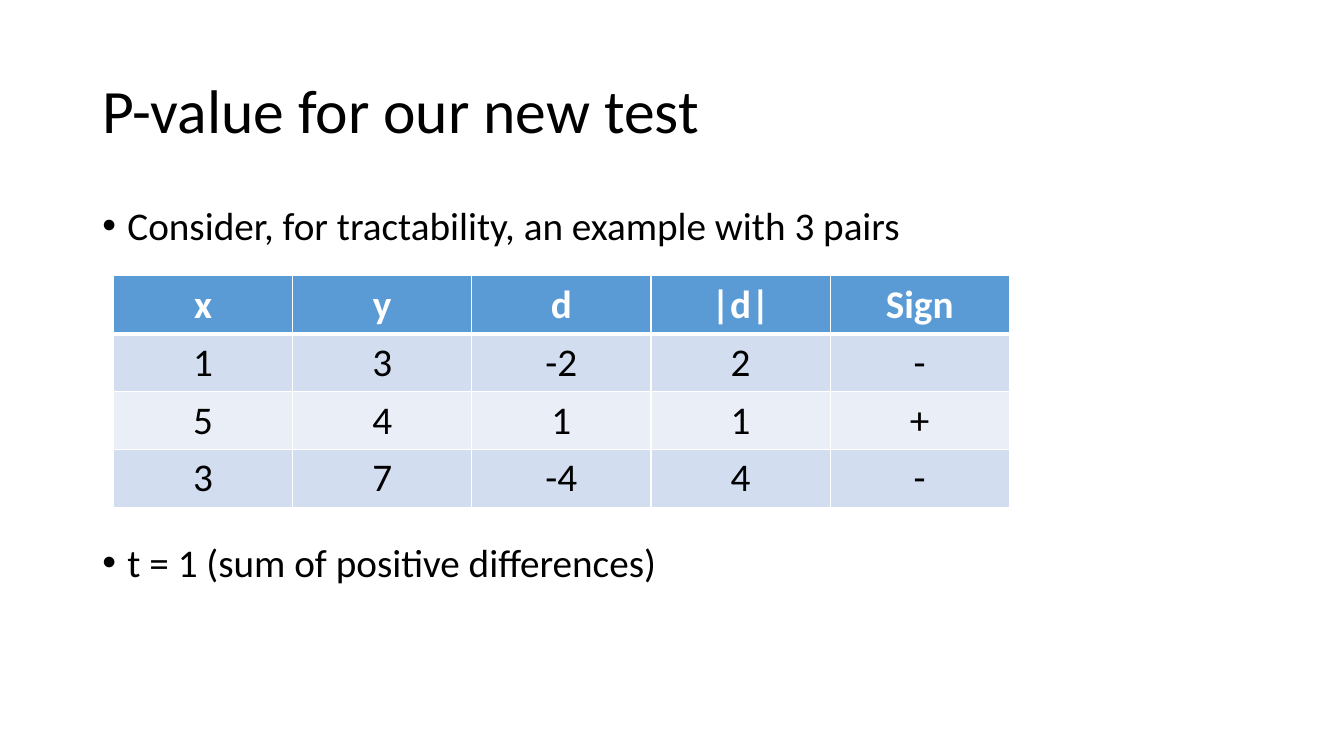
from dataclasses import dataclass

from lxml import etree
from pptx import Presentation
from pptx.dml import color
from pptx.enum import text
from pptx.oxml import ns
from pptx.util import Pt


@dataclass(frozen=True)
class Theme:
    font: str = "Calibri"
    title_size: float = 44
    body_size: float = 28
    ink: str = "000000"
    paper: str = "FFFFFF"
    header: str = "5B9BD5"
    bands: tuple[str, str] = ("D2DEEF", "EAEFF7")


@dataclass(frozen=True)
class Line:
    words: str
    size: float
    space_before: float = 0
    bullet: bool = False


@dataclass(frozen=True)
class TextBlock:
    left: float
    top: float
    width: float
    height: float
    anchor: text.MSO_ANCHOR
    lines: tuple[Line, ...]


@dataclass(frozen=True)
class Grid:
    left: float
    top: float
    column_width: float
    row_height: float
    rows: tuple[tuple[str, ...], ...]


THEME = Theme()

TITLE = TextBlock(66, 28.75, 828, 104.4, text.MSO_ANCHOR.MIDDLE, (
    Line("P-value for our new test", THEME.title_size),
))

BODY = TextBlock(66, 143.75, 828, 342.6, text.MSO_ANCHOR.TOP, (
    Line("Consider, for tractability, an example with 3 pairs", THEME.body_size, 10, True),
    Line("t = 1 (sum of positive differences)", THEME.body_size, 210.6, True),
))

PAIRS = Grid(81, 197, 128, 41.4, (
    ("x", "y", "d", "|d|", "Sign"),
    ("1", "3", "-2", "2", "-"),
    ("5", "4", "1", "1", "+"),
    ("3", "7", "-4", "4", "-"),
))


def set_font(paragraph, size: float, ink: str, bold: bool = False) -> None:
    font = paragraph.font
    font.name = THEME.font
    font.size = Pt(size)
    font.bold = bold
    font.color.rgb = color.RGBColor.from_string(ink)


def add_bullet(paragraph) -> None:
    properties = paragraph._p.get_or_add_pPr()
    properties.set("marL", str(Pt(18)))
    properties.set("indent", str(Pt(-18)))
    bullet_font = etree.Element(ns.qn("a:buFont"), typeface="Arial")
    bullet = etree.Element(ns.qn("a:buChar"), char="•")
    defaults = properties.find(ns.qn("a:defRPr"))
    defaults.addprevious(bullet_font)
    defaults.addprevious(bullet)


def draw_text(slide, block: TextBlock) -> None:
    shape = slide.shapes.add_textbox(
        Pt(block.left), Pt(block.top), Pt(block.width), Pt(block.height)
    )
    frame = shape.text_frame
    frame.word_wrap = True
    frame.vertical_anchor = block.anchor
    for index, line in enumerate(block.lines):
        paragraph = frame.add_paragraph() if index else frame.paragraphs[0]
        paragraph.text = line.words
        paragraph.line_spacing = 0.9
        paragraph.space_before = Pt(line.space_before)
        set_font(paragraph, line.size, THEME.ink)
        if line.bullet:
            add_bullet(paragraph)


def add_border(cell, side: str, width: float) -> None:
    properties = cell._tc.get_or_add_tcPr()
    border = etree.SubElement(properties, ns.qn(f"a:ln{side}"), w=str(Pt(width)))
    fill = etree.SubElement(border, ns.qn("a:solidFill"))
    etree.SubElement(fill, ns.qn("a:srgbClr"), val=THEME.paper)


def draw_table(slide, grid: Grid) -> None:
    row_count, column_count = len(grid.rows), len(grid.rows[0])
    table = slide.shapes.add_table(
        row_count, column_count, Pt(grid.left), Pt(grid.top),
        Pt(grid.column_width * column_count), Pt(grid.row_height * row_count),
    ).table
    for row_index, row in enumerate(grid.rows):
        is_header = row_index == 0
        background = THEME.header if is_header else THEME.bands[(row_index - 1) % 2]
        for column_index, words in enumerate(row):
            cell = table.cell(row_index, column_index)
            for side in "LRTB":
                below_header = (row_index, side) in ((0, "B"), (1, "T"))
                add_border(cell, side, 3 if below_header else 1)
            cell.fill.solid()
            cell.fill.fore_color.rgb = color.RGBColor.from_string(background)
            paragraph = cell.text_frame.paragraphs[0]
            paragraph.text = words
            paragraph.alignment = text.PP_ALIGN.CENTER
            ink = THEME.paper if is_header else THEME.ink
            set_font(paragraph, THEME.body_size, ink, is_header)


def main() -> None:
    presentation = Presentation()
    presentation.slide_width = Pt(960)
    presentation.slide_height = Pt(540)
    slide = presentation.slides.add_slide(presentation.slide_layouts[6])
    draw_text(slide, TITLE)
    draw_text(slide, BODY)
    draw_table(slide, PAIRS)
    presentation.save("out.pptx")


if __name__ == "__main__":
    main()
